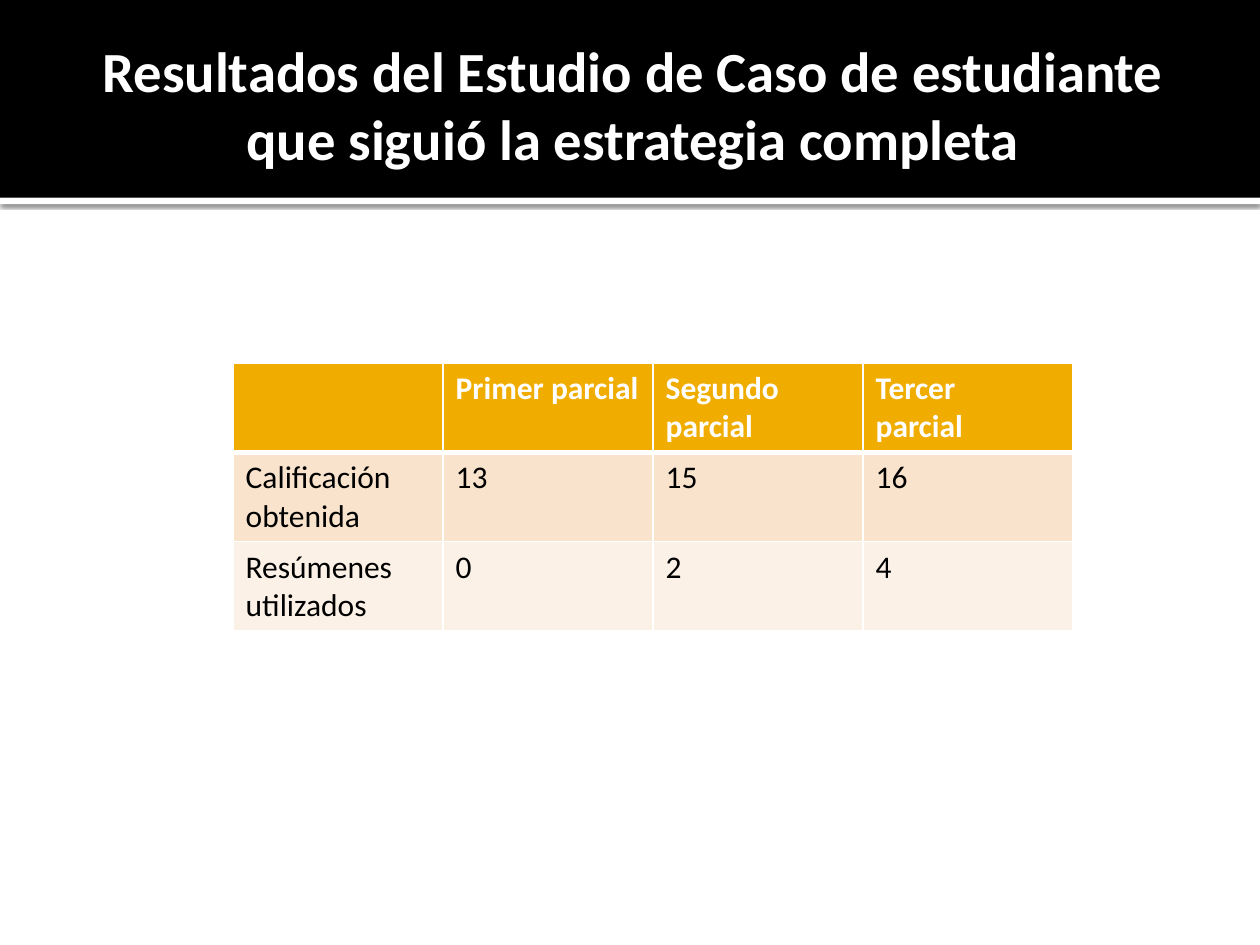
from lxml.etree import SubElement
from pptx import Presentation
from pptx.dml.color import RGBColor
from pptx.enum.shapes import MSO_SHAPE
from pptx.enum.text import MSO_ANCHOR, PP_ALIGN
from pptx.oxml import parse_xml
from pptx.oxml.ns import nsdecls, qn
from pptx.util import Inches, Pt

COLORS = {"black": "000000", "white": "FFFFFF", "header": "F0AD00",
          "odd": "F9E3CC", "even": "FCF1E7"}
RESULTS = [
    ["", "Primer parcial", "Segundo\nparcial", "Tercer\nparcial"],
    ["Calificación obtenida", "13", "15", "16"],
    ["Resúmenes utilizados", "0", "2", "4"],
]
ROW_STYLES = [("header", "white", True), ("odd", "black", False), ("even", "black", False)]


def write(frame, text, size, color, bold, align):
    frame.text = text
    for paragraph in frame.paragraphs:
        paragraph.alignment = align
        for name, value in {"name": "Calibri", "size": Pt(size), "bold": bold}.items():
            setattr(paragraph.font, name, value)
        paragraph.font.color.rgb = RGBColor.from_string(COLORS[color])
        for run in paragraph.runs:
            for name, value in {"name": "Calibri", "size": Pt(size), "bold": bold}.items():
                setattr(run.font, name, value)
            run.font.color.rgb = RGBColor.from_string(COLORS[color])


deck = Presentation()
deck.slide_width, deck.slide_height = Inches(10), Inches(7.5)
W, H = deck.slide_width, deck.slide_height
slide = deck.slides.add_slide(deck.slide_layouts[6])

band_height = Inches(1.57)
for top, height, color in [(band_height, Inches(0.05), "white"), (0, band_height, "black")]:
    band = slide.shapes.add_shape(MSO_SHAPE.RECTANGLE, 0, top, W, height)
    band.shadow.inherit = False
    band.fill.solid()
    band.fill.fore_color.rgb = RGBColor.from_string(COLORS[color])
    band.line.fill.background()
    if color == "white":
        effects = band.element.spPr.find(qn("a:effectLst"))
        effects.append(parse_xml(
            f'<a:outerShdw {nsdecls("a")} blurRad="{Pt(2.5)}" dist="{Pt(0.8)}" dir="5400000" '
            'algn="tl" rotWithShape="0"><a:srgbClr val="000000"><a:alpha val="60000"/>'
            '</a:srgbClr></a:outerShdw>'))

title = slide.shapes.add_textbox(int(W * 0.05), Inches(0.14), int(W * 0.9), Inches(1.37)).text_frame
for name, value in {"word_wrap": True, "vertical_anchor": MSO_ANCHOR.MIDDLE,
                    "margin_left": Inches(0.1), "margin_right": Inches(0.05)}.items():
    setattr(title, name, value)
write(title, "Resultados del Estudio de Caso de estudiante que siguió la estrategia completa",
      32.4, "white", True, PP_ALIGN.CENTER)

column, row_height = W // 6, Inches(0.71)
table = slide.shapes.add_table(len(RESULTS), len(RESULTS[0]), Inches(1.85), Inches(2.88),
                               column * len(RESULTS[0]), row_height * len(RESULTS)).table
for r, (texts, (fill, ink, bold)) in enumerate(zip(RESULTS, ROW_STYLES)):
    table.rows[r].height = row_height
    for c, text in enumerate(texts):
        cell = table.cell(r, c)
        write(cell.text_frame, text, 18, ink, bold, PP_ALIGN.LEFT)
        properties = cell._tc.get_or_add_tcPr()
        for side in ("L", "R", "T", "B"):
            thick = (r, side) in [(0, "B"), (1, "T")]
            border = SubElement(properties, qn(f"a:ln{side}"), w=str(Pt(3 if thick else 1)))
            SubElement(SubElement(border, qn("a:solidFill")), qn("a:srgbClr"), val=COLORS["white"])
        cell.fill.solid()
        cell.fill.fore_color.rgb = RGBColor.from_string(COLORS[fill])

deck.save("out.pptx")
